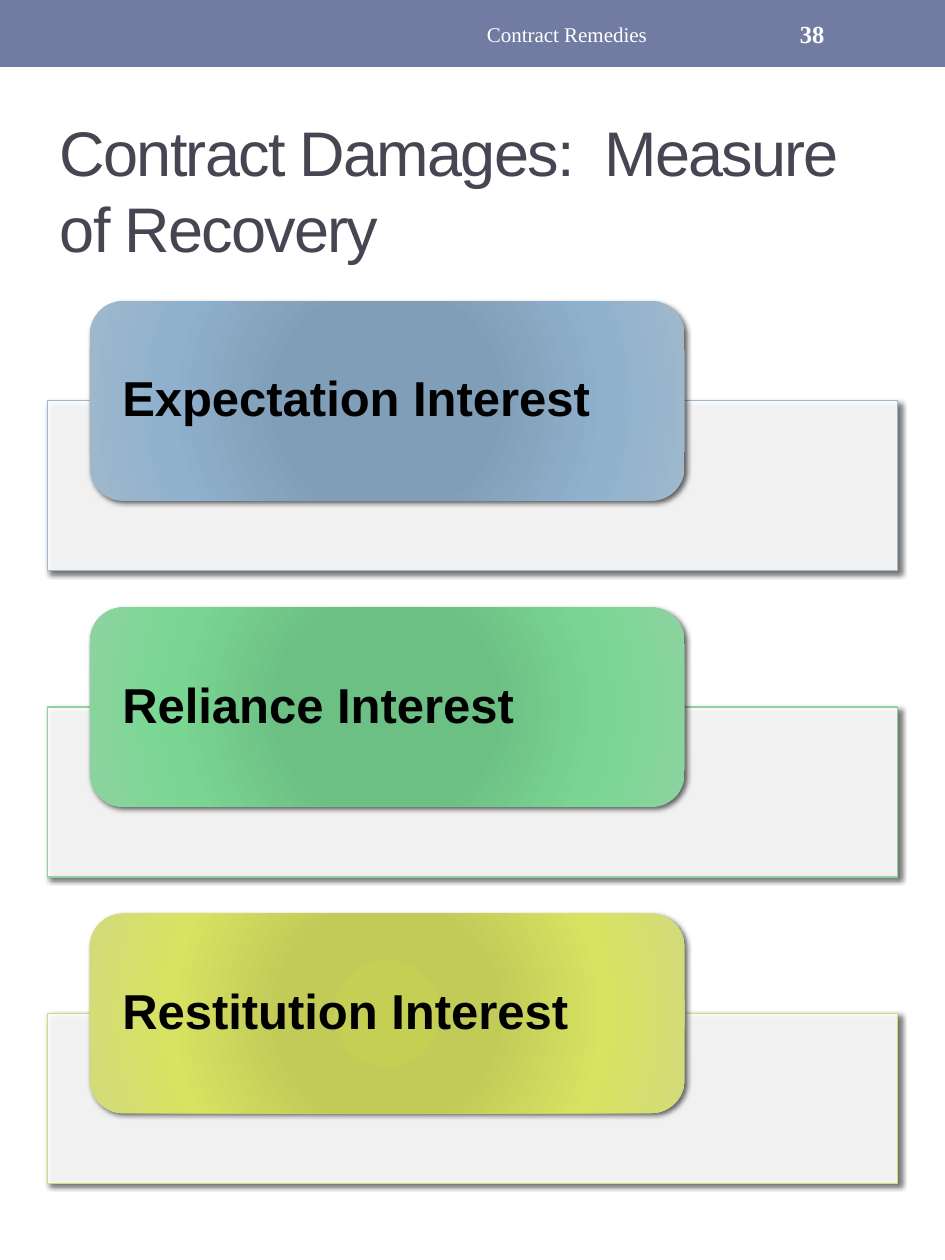
from lxml import etree
from pptx import Presentation
from pptx.dml.color import RGBColor
from pptx.enum.shapes import MSO_SHAPE
from pptx.enum.text import MSO_ANCHOR, MSO_AUTO_SIZE, PP_ALIGN
from pptx.oxml import parse_xml
from pptx.oxml.ns import nsdecls, qn
from pptx.util import Pt

RECTANGLE, ROUNDED = MSO_SHAPE.RECTANGLE, MSO_SHAPE.ROUNDED_RECTANGLE
MIDDLE, LEFT, CENTER = MSO_ANCHOR.MIDDLE, PP_ALIGN.LEFT, PP_ALIGN.CENTER
NO_AUTOFIT = MSO_AUTO_SIZE.NONE

COLORS = {"band": "727CA3", "title": "464653", "white": "FFFFFF", "black": "000000"}
# Label, panel outline, gradient stops from the centre outwards
INTERESTS = [
    ("Expectation Interest", "9FB8CD", ["7E9EB9", "809EB7", "8FB1CD", "9FB8CD"]),
    ("Reliance Interest", "8DD3A0", ["6AC382", "6DC084", "7AD793", "8DD3A0"]),
    ("Restitution Interest", "D2DA7A", ["C5CF54", "C2CB58", "D8E362", "D2DA7A"]),
]
STOP_POSITIONS = [0, 34, 70, 100]
FIRST_TOP, PITCH = 172.1, 175

SHADOW = f"""<a:effectLst {nsdecls("a")}>
  <a:outerShdw blurRad="{Pt(3)}" dist="{Pt(2)}" dir="2700000" algn="tl" rotWithShape="0">
    <a:srgbClr val="{COLORS['black']}"><a:alpha val="60000"/></a:srgbClr>
  </a:outerShdw>
</a:effectLst>"""


def write(shape, text, font, color, align=LEFT, insets=(7.2, 3.6, 7.2, 3.6)):
    """Fill the shape with one formatted, vertically centred paragraph."""
    frame = shape.text_frame
    sides = ("margin_left", "margin_top", "margin_right", "margin_bottom")
    for side, inset in zip(sides, insets):
        setattr(frame, side, Pt(inset))
    frame.word_wrap, frame.auto_size, frame.vertical_anchor = True, NO_AUTOFIT, MIDDLE
    paragraph = frame.paragraphs[0]
    paragraph.alignment = align
    run = paragraph.add_run()
    run.text = text
    for name, value in font.items():
        setattr(run.font, name, value)
    run.font.color.rgb = RGBColor.from_string(COLORS[color])
    return paragraph, run


def add_block(kind, left, top, width, height, color):
    """Add a borderless, solid, shadowless shape."""
    shape = slide.shapes.add_shape(kind, Pt(left), Pt(top), Pt(width), Pt(height))
    shape.shadow.inherit = False
    shape.fill.solid()
    shape.fill.fore_color.rgb = RGBColor.from_string(color)
    shape.line.fill.background()
    return shape


presentation = Presentation()
presentation.slide_width, presentation.slide_height = Pt(540), Pt(720)
slide = presentation.slides.add_slide(presentation.slide_layouts[5])

band = add_block(RECTANGLE, 0, 0, 540, 38.2, COLORS["band"])

title = slide.shapes.title
title.left, title.top, title.width, title.height = Pt(27), Pt(56.2), Pt(486), Pt(103.7)
_, title_run = write(title, "Contract Damages:  Measure of Recovery",
                     {"name": "Arial", "size": Pt(36)}, "title")
title_run.font._element.set("spc", "-100")

for index, (label, outline, gradient) in enumerate(INTERESTS):
    top = FIRST_TOP + index * PITCH

    panel = add_block(RECTANGLE, 27, top + 56.9, 486, 97.2, COLORS["white"])
    panel.line.color.rgb = RGBColor.from_string(outline)
    panel.line.width = Pt(0.75)
    fill_color = panel._element.spPr.find(qn("a:solidFill"))[0]
    etree.SubElement(fill_color, qn("a:alpha"), val="90000")

    tab = add_block(ROUNDED, 51.3, top, 340, 114, gradient[0])
    stops = "".join(
        f'<a:gs pos="{position * 1000}"><a:srgbClr val="{color}"/></a:gs>'
        for position, color in zip(STOP_POSITIONS, gradient))
    solid = tab._element.spPr.find(qn("a:solidFill"))
    solid.getparent().replace(solid, parse_xml(
        f'<a:gradFill {nsdecls("a")} rotWithShape="1"><a:gsLst>{stops}</a:gsLst>'
        '<a:path path="circle"><a:fillToRect l="50000" t="50000" r="50000" b="50000"/>'
        '</a:path></a:gradFill>'))

    for shape in (panel, tab):
        empty = shape._element.spPr.find(qn("a:effectLst"))
        empty.getparent().replace(empty, parse_xml(SHADOW))

    caption = slide.shapes.add_textbox(Pt(56.9), Pt(top + 5.5), Pt(329), Pt(103))
    paragraph, _ = write(caption, label, {"name": "Arial", "size": Pt(28), "bold": True},
                         "black", insets=(13, 0, 13, 0))
    paragraph.line_spacing = 0.9

footer = slide.shapes.add_textbox(Pt(202.5), Pt(2.2), Pt(243), Pt(34.6))
write(footer, "Contract Remedies", {"name": "Times New Roman", "size": Pt(12)}, "white", CENTER)

page_number = slide.shapes.add_textbox(Pt(450), Pt(2.2), Pt(63), Pt(34.6))
write(page_number, "38", {"name": "Times New Roman", "size": Pt(14), "bold": True}, "white")

presentation.save("out.pptx")
